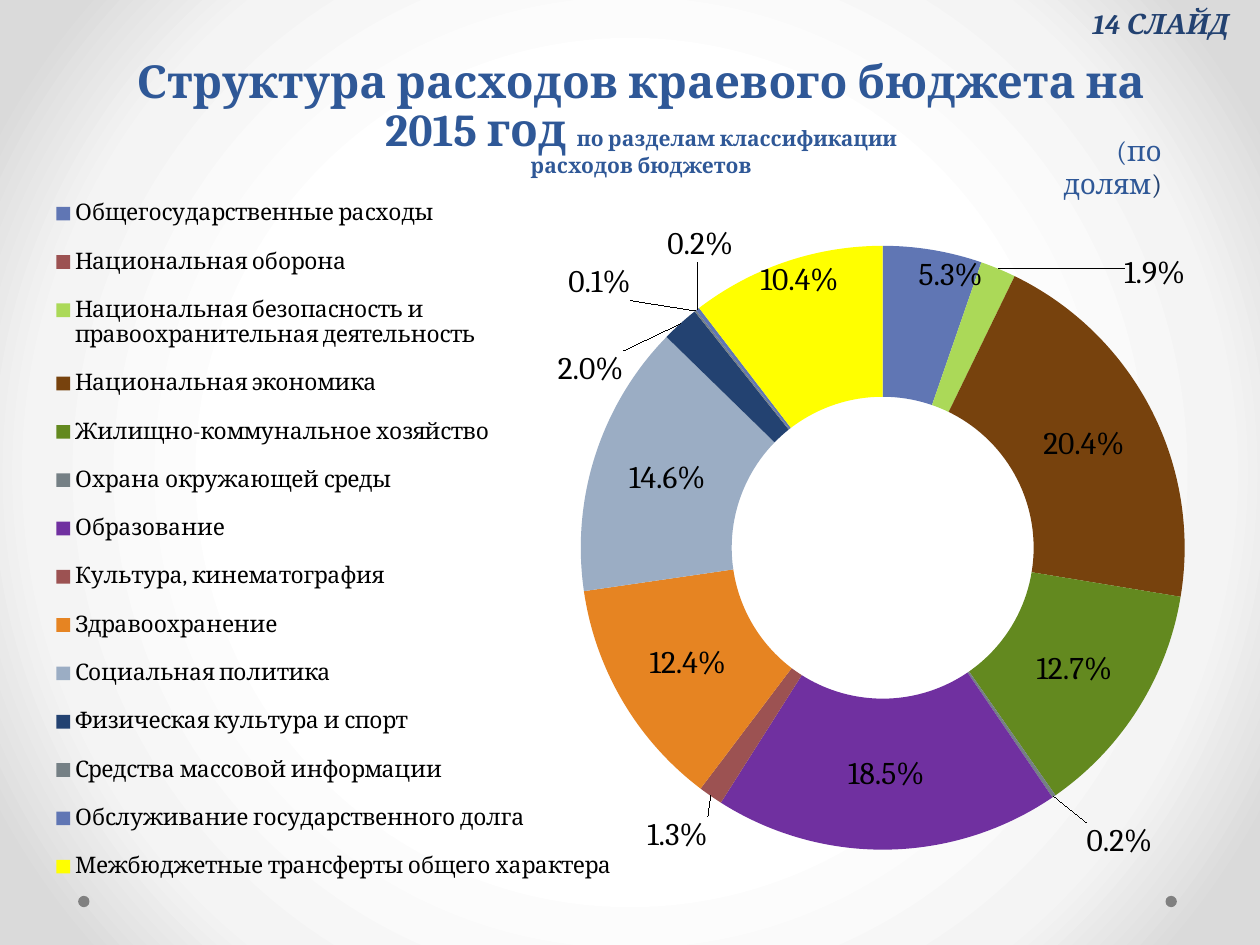
from dataclasses import dataclass
from math import cos, pi, sin
from typing import Optional

from lxml.etree import SubElement
from pptx import Presentation
from pptx.chart.data import CategoryChartData
from pptx.dml.color import RGBColor
from pptx.enum.chart import XL_CHART_TYPE, XL_LEGEND_POSITION
from pptx.enum.shapes import MSO_SHAPE
from pptx.enum.text import MSO_ANCHOR, PP_ALIGN
from pptx.oxml import parse_xml
from pptx.oxml.ns import nsdecls, qn
from pptx.util import Inches, Pt

FONT = "Cambria"
PERCENT = "0.0%"
COLORS = {
    "title": "2F5897", "navy": "234271", "dot": "808080", "black": "000000",
    "blue": "6076B4", "red": "9C5252", "lime": "ABD958", "brown": "77420D",
    "green": "63891F", "gray": "758085", "purple": "7030A0",
    "orange": "E68422", "steel": "9BADC4", "yellow": "FFFF00",
}
BACKGROUND_STOPS = ((50, "FFFFFF"), (76, "F4F4F4"), (92, "DADADA"))
CHART_LEFT, CHART_TOP, CHART_WIDTH, CHART_HEIGHT = 0.28, 1.23, 9.29, 6.06
RING_X, RING_Y, RING_RADIUS = 7.0, 4.35, 1.8


@dataclass
class Section:
    name: str
    share: float
    color: str
    label: Optional[tuple[float, float]] = None


SECTIONS = [
    Section("Общегосударственные расходы", 0.053, "blue", (7.54, 2.18)),
    Section("Национальная оборона", 0, "red", (8.5, 1.89)),
    Section("Национальная безопасность и правоохранительная деятельность",
            0.019, "lime", (9.16, 2.17)),
    Section("Национальная экономика", 0.204, "brown"),
    Section("Жилищно-коммунальное хозяйство", 0.127, "green"),
    Section("Охрана окружающей среды", 0.002, "gray", (8.88, 6.68)),
    Section("Образование", 0.185, "purple"),
    Section("Культура, кинематография", 0.013, "red", (5.37, 6.63)),
    Section("Здравоохранение", 0.124, "orange"),
    Section("Социальная политика", 0.146, "steel"),
    Section("Физическая культура и спорт", 0.02, "navy", (4.68, 2.93)),
    Section("Средства массовой информации", 0.001, "gray", (4.75, 2.24)),
    Section("Обслуживание государственного долга", 0.002, "blue", (5.55, 1.94)),
    Section("Межбюджетные трансферты общего характера", 0.104, "yellow", (6.34, 2.22)),
]


def rgb(name: str) -> RGBColor:
    return RGBColor.from_string(COLORS[name])


def add_text(paragraph, text: str, *, size: float, color: str = "title",
             bold: bool = False, italic: bool = False) -> None:
    for index, line in enumerate(text.split("\n")):
        if index:
            paragraph.add_line_break()
        run = paragraph.add_run()
        run.text = line
        run.font.name = FONT
        run.font.size = Pt(size)
        run.font.bold = bold
        run.font.italic = italic
        run.font.color.rgb = rgb(color)


def add_text_box(slide, left: float, top: float, width: float, height: float, *,
                 align: PP_ALIGN, anchor: MSO_ANCHOR = MSO_ANCHOR.TOP, wrap: bool = False):
    shape = slide.shapes.add_textbox(Inches(left), Inches(top), Inches(width), Inches(height))
    shape.text_frame.word_wrap = wrap
    shape.text_frame.vertical_anchor = anchor
    paragraph = shape.text_frame.paragraphs[0]
    paragraph.alignment = align
    return paragraph


def set_background(slide) -> None:
    stops = "".join(f'<a:gs pos="{position * 1000}"><a:srgbClr val="{color}"/></a:gs>'
                    for position, color in BACKGROUND_STOPS)
    gradient = parse_xml(
        f'<a:gradFill {nsdecls("a")} rotWithShape="1"><a:gsLst>{stops}</a:gsLst>'
        '<a:path path="circle"><a:fillToRect l="50000" t="50000" r="50000" b="50000"/></a:path>'
        '</a:gradFill>')
    fill = slide.background.fill
    fill.solid()
    properties = slide.element.find(".//" + qn("p:bgPr"))
    properties.replace(properties[0], gradient)


def add_dot(slide, left: float) -> None:
    shape = slide.shapes.add_shape(MSO_SHAPE.OVAL, Inches(left), Inches(7.11),
                                   Inches(0.09), Inches(0.09))
    shape.shadow.inherit = False
    shape.fill.solid()
    shape.fill.fore_color.rgb = rgb("dot")
    shape.line.fill.background()


def make_layout(**values):
    layout = parse_xml(f'<c:layout {nsdecls("c")}><c:manualLayout/></c:layout>')
    for tag, value in values.items():
        SubElement(layout[0], qn("c:" + tag)).set("val", str(value))
    return layout


def set_layout(parent, successor: str, **values) -> None:
    for old in parent.findall(qn("c:layout")):
        parent.remove(old)
    parent.find(qn(successor)).addprevious(make_layout(**values))


def format_font(font, size: float) -> None:
    font.name = FONT
    font.size = Pt(size)
    font.color.rgb = rgb("black")


def place_labels(series) -> None:
    start = 0.0
    for index, section in enumerate(SECTIONS):
        angle = 2 * pi * (start + section.share / 2)
        start += section.share
        if section.label is None:
            continue
        format_font(series.points[index].data_label.font, 18)
        label = next(item for item in series.data_labels._element.findall(qn("c:dLbl"))
                     if item.find(qn("c:idx")).get("val") == str(index))
        offset_x = (section.label[0] - RING_X - RING_RADIUS * sin(angle)) / CHART_WIDTH
        offset_y = (section.label[1] - RING_Y + RING_RADIUS * cos(angle)) / CHART_HEIGHT
        number_format = parse_xml(
            f'<c:numFmt {nsdecls("c")} formatCode="{PERCENT}" sourceLinked="0"/>')
        layout = make_layout(x=round(offset_x, 4), y=round(offset_y, 4))
        label.find(qn("c:idx")).addnext(layout)
        layout.addnext(number_format)


def add_budget_chart(slide) -> None:
    data = CategoryChartData(number_format=PERCENT)
    data.categories = [section.name for section in SECTIONS]
    data.add_series("Series 1", [section.share for section in SECTIONS])
    chart = slide.shapes.add_chart(
        XL_CHART_TYPE.DOUGHNUT, Inches(CHART_LEFT), Inches(CHART_TOP),
        Inches(CHART_WIDTH), Inches(CHART_HEIGHT), data).chart
    chart.has_title = False
    format_font(chart.font, 18)
    chart.has_legend = True
    chart.legend.position = XL_LEGEND_POSITION.LEFT
    chart.legend.include_in_layout = False
    format_font(chart.legend.font, 13)
    set_layout(chart.legend._element, "c:overlay", xMode="edge", yMode="edge",
               x=0.01, y=0.03, w=0.49, h=0.95)
    chart.legend._element.find(qn("c:overlay")).set("val", "1")

    plot = chart.plots[0]
    plot.vary_by_categories = True
    doughnut = plot._element
    doughnut.find(qn("c:holeSize")).set("val", "39")
    set_layout(doughnut.getparent(), "c:doughnutChart", layoutTarget="inner",
               xMode="edge", yMode="edge", x=0.466, y=0.119, w=0.516, h=0.791)

    series = plot.series[0]
    for index, section in enumerate(SECTIONS):
        point = series.points[index]
        point.format.fill.solid()
        point.format.fill.fore_color.rgb = rgb(section.color)
        point.format.line.fill.background()
    labels = series.data_labels
    labels.show_value = True
    labels.show_percentage = False
    labels.number_format = PERCENT
    labels.number_format_is_linked = False
    format_font(labels.font, 18)
    place_labels(series)
    leader = labels._element.find(qn("c:showLeaderLines"))
    if leader is None:
        leader = SubElement(labels._element, qn("c:showLeaderLines"))
    leader.set("val", "1")


def main() -> None:
    presentation = Presentation()
    presentation.slide_width = Inches(10)
    presentation.slide_height = Inches(7.5)
    slide = presentation.slides.add_slide(presentation.slide_layouts[6])
    set_background(slide)
    for left in (9.25, 0.62):
        add_dot(slide, left)
    title = add_text_box(slide, 0.59, 0, 9, 1.46, align=PP_ALIGN.CENTER,
                         anchor=MSO_ANCHOR.BOTTOM, wrap=True)
    title.line_spacing = 0.87
    add_text(title, "Структура расходов краевого бюджета на\n2015 год ", size=26, bold=True)
    add_text(title, "по разделам классификации\nрасходов бюджетов", size=12, bold=True)
    add_budget_chart(slide)
    unit = add_text_box(slide, 8.24, 1.01, 1.08, 0.44, align=PP_ALIGN.RIGHT)
    add_text(unit, "(по долям", size=16)
    add_text(unit, ")", size=16, color="navy")
    number = add_text_box(slide, 8.48, 0, 1.37, 0.37, align=PP_ALIGN.RIGHT)
    add_text(number, "14 СЛАЙД", size=16, color="navy", bold=True, italic=True)
    presentation.save("out.pptx")


if __name__ == "__main__":
    main()
